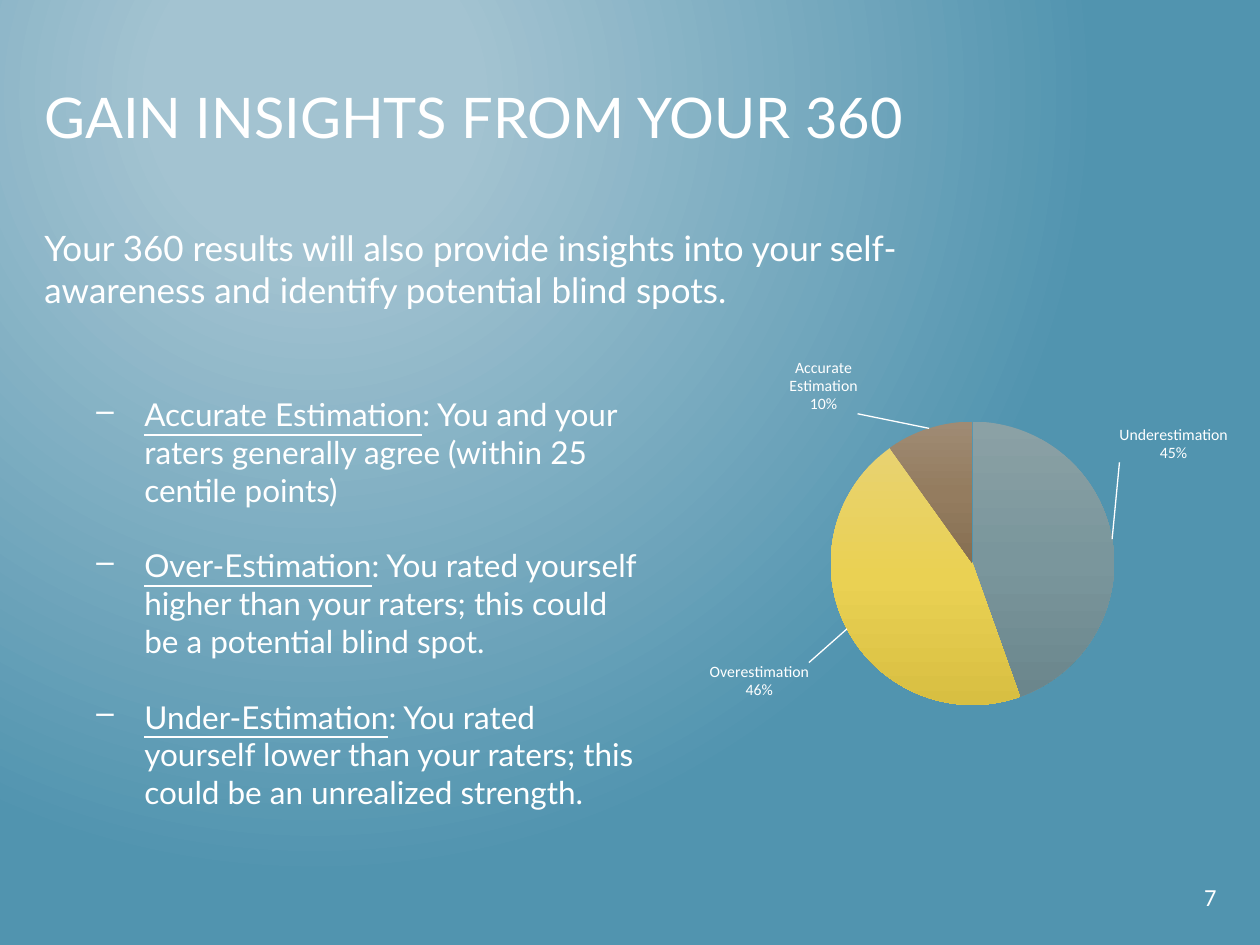
from lxml import etree
from pptx import Presentation, util as u
from pptx.chart import data
from pptx.dml import color
from pptx.enum import chart as charts, text
from pptx.oxml import parse_xml
from pptx.oxml.ns import nsdecls, qn

WHITE = "FFFFFF"
SCALE = 914400 / 126


def px(*lengths):
    return [u.Emu(round(length * SCALE)) for length in lengths]


def set_gradient(gradient, stops, direction):
    for child in list(gradient):
        gradient.remove(child)
    stop_list = etree.SubElement(gradient, qn("a:gsLst"))
    for position, value in stops:
        stop = etree.SubElement(stop_list, qn("a:gs"), pos=str(position * 1000))
        etree.SubElement(stop, qn("a:srgbClr"), val=value)
    gradient.append(parse_xml(direction))


presentation = Presentation()
presentation.slide_width, presentation.slide_height = px(1260, 945)
slide = presentation.slides.add_slide(presentation.slide_layouts[5])

slide.background.fill.gradient()
set_gradient(
    slide.element.xpath(".//p:bg//a:gradFill")[0],
    [(20, "A3C3D1"), (100, "5194AF")],
    f'<a:path {nsdecls("a")} path="circle">'
    '<a:fillToRect l="50000" t="20000" r="100000" b="100000"/></a:path>',
)

title = slide.shapes.title
title.left, title.top, title.width, title.height = px(32, 76, 1071, 73)
number = slide.shapes.add_textbox(*px(977, 876, 252, 50))
definitions = slide.shapes.add_textbox(*px(84, 389, 567, 471))
introduction = slide.shapes.add_textbox(*px(32, 220, 950, 97))

blocks = [
    (title, "Lato", 32, text.PP_ALIGN.LEFT, [("", "GAIN INSIGHTS FROM YOUR 360")]),
    (number, "Calibri", 14, text.PP_ALIGN.RIGHT, [("", "7")]),
    (definitions, "Lato", 18, text.PP_ALIGN.LEFT, [
        ("Accurate Estimation", ": You and your raters generally agree (within 25 centile points)"),
        ("Over-Estimation", ": You rated yourself higher than your raters; this could be a potential blind spot."),
        ("Under-Estimation", ": You rated yourself lower than your raters; this could be an unrealized strength."),
    ]),
    (introduction, "Lato", 20, text.PP_ALIGN.LEFT, [
        ("", "Your 360 results will also provide insights into your self-awareness and identify potential blind spots."),
    ]),
]
for shape, font_name, size, alignment, paragraphs in blocks:
    frame = shape.text_frame
    frame.word_wrap = True
    frame.auto_size = text.MSO_AUTO_SIZE.NONE
    frame.vertical_anchor = text.MSO_ANCHOR.TOP
    for index, (term, wording) in enumerate(paragraphs):
        paragraph = frame.add_paragraph() if index else frame.paragraphs[0]
        paragraph.alignment = alignment
        if index:
            paragraph.space_before = u.Pt(21.6)
        for content, underline in [(term, True), (wording, False)]:
            if content:
                run = paragraph.add_run()
                run.text = content
                run.font.color.rgb = color.RGBColor.from_string(WHITE)
                values = {"name": font_name, "size": u.Pt(size), "underline": underline}
                for name, value in values.items():
                    setattr(run.font, name, value)

for paragraph in definitions.text_frame.paragraphs:
    properties = paragraph._p.get_or_add_pPr()
    indent = px(48)[0]
    properties.set("marL", str(indent))
    properties.set("indent", str(-indent))
    etree.SubElement(properties, qn("a:buChar"), char="–")

chart_data = data.CategoryChartData()
chart_data.categories = ["Underestimation", "Overestimation", "Accurate Estimation"]
chart_data.add_series("Series 1", [45, 46, 10])
chart = slide.shapes.add_chart(
    charts.XL_CHART_TYPE.PIE, *px(667, 346, 630, 378), chart_data
).chart
chart.has_title = False
chart.has_legend = False
chart.font.name = "Calibri"
chart.font.size = u.Pt(10)
chart.font.color.rgb = color.RGBColor.from_string(WHITE)
plot = chart.plots[0]
plot.vary_by_categories = True

slice_colors = [
    ("8BA1A5", "7A969C", "6B868C"),
    ("E8D271", "EAD153", "D8BF42"),
    ("9F8B74", "947C5F", "866F52"),
]
series = plot.series[0]
for index, slice_stops in enumerate(slice_colors):
    series.points[index].format.fill.gradient()
    set_gradient(
        chart._chartSpace.xpath(".//c:dPt/c:spPr/a:gradFill")[index],
        zip((0, 50, 100), slice_stops),
        f'<a:lin {nsdecls("a")} ang="5400000" scaled="0"/>',
    )

label_text = (
    '<c:numFmt formatCode="0%" sourceLinked="0"/><c:spPr><a:noFill/><a:ln><a:noFill/></a:ln></c:spPr>'
    '<c:txPr><a:bodyPr/><a:p><a:pPr><a:defRPr sz="900">'
    f'<a:solidFill><a:srgbClr val="{WHITE}"/></a:solidFill><a:latin typeface="Calibri"/>'
    '</a:defRPr></a:pPr><a:endParaRPr lang="en-US"/></a:p></c:txPr><c:dLblPos val="outEnd"/>'
    '<c:showLegendKey val="0"/><c:showVal val="0"/><c:showCatName val="1"/>'
    '<c:showSerName val="0"/><c:showPercent val="1"/><c:showBubbleSize val="0"/>'
    '<c:separator>\n</c:separator>'
)
label_offsets = [(0, -0.2), (-0.05, 0.08), (-0.11, -0.02)]
point_labels = "".join(
    f'<c:dLbl><c:idx val="{index}"/><c:layout><c:manualLayout>'
    f'<c:x val="{x}"/><c:y val="{y}"/></c:manualLayout></c:layout>{label_text}</c:dLbl>'
    for index, (x, y) in enumerate(label_offsets)
)
labels = parse_xml(
    f'<c:dLbls {nsdecls("c", "a")}>{point_labels}{label_text}<c:showLeaderLines val="1"/>'
    f'<c:leaderLines><c:spPr><a:ln w="9525"><a:solidFill><a:srgbClr val="{WHITE}"/>'
    '</a:solidFill></a:ln></c:spPr></c:leaderLines></c:dLbls>'
)
series._element.xpath("c:cat")[0].addprevious(labels)

plot_area = chart._chartSpace.xpath(".//c:plotArea")[0]
for layout in plot_area.xpath("c:layout"):
    plot_area.remove(layout)
plot_area.insert(0, parse_xml(
    f'<c:layout {nsdecls("c")}><c:manualLayout><c:layoutTarget val="inner"/>'
    '<c:xMode val="edge"/><c:yMode val="edge"/><c:x val="0.26"/><c:y val="0.2"/>'
    '<c:w val="0.45"/><c:h val="0.75"/></c:manualLayout></c:layout>'
))

presentation.save("out.pptx")
